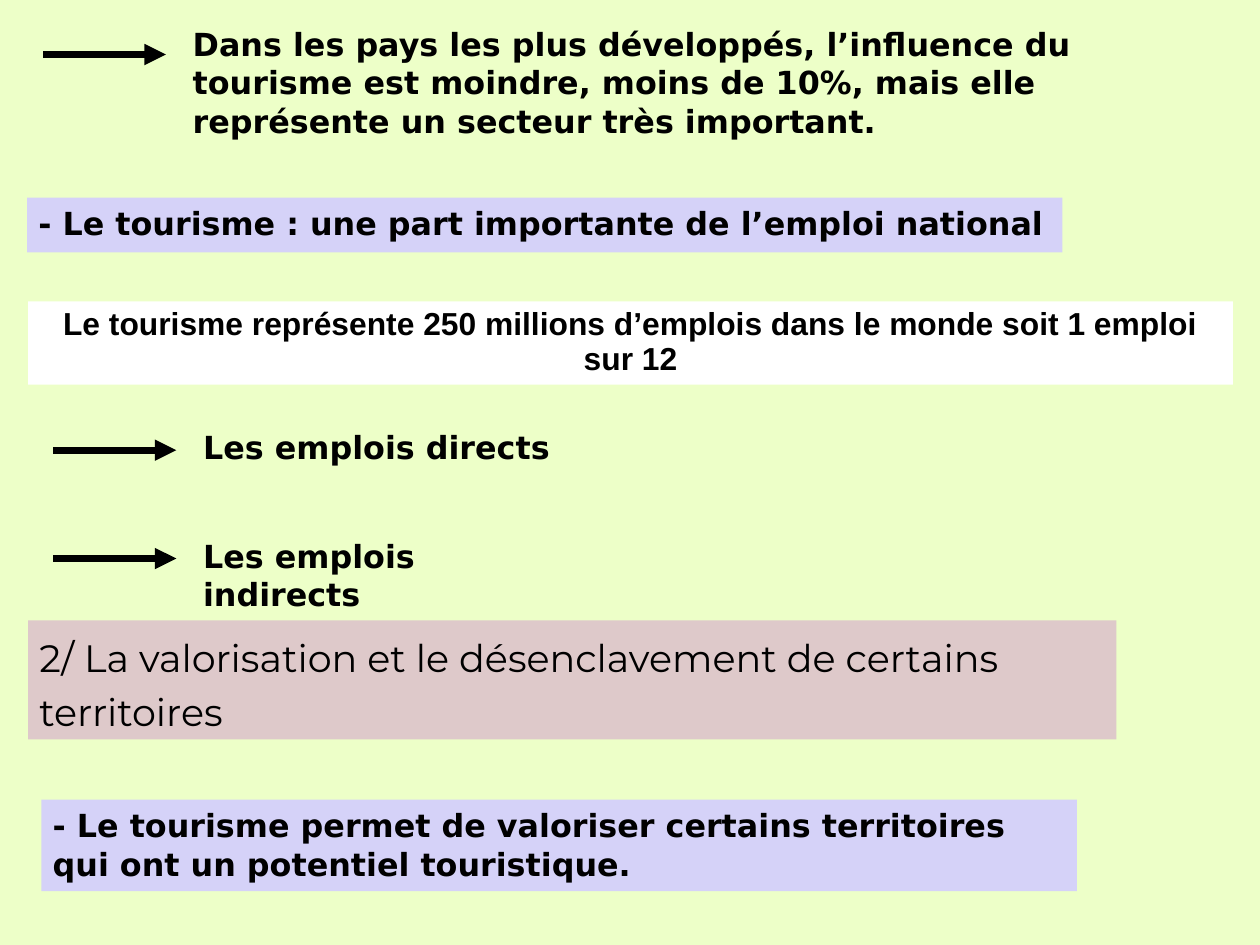
from lxml.etree import SubElement
from pptx import Presentation
from pptx.dml.color import RGBColor
from pptx.enum.shapes import MSO_CONNECTOR, MSO_SHAPE
from pptx.enum.text import MSO_ANCHOR, PP_ALIGN
from pptx.oxml.ns import qn
from pptx.util import Cm, Pt

WIDTH, HEIGHT = Cm(28), Cm(21)
BLACK, LILAC, ROSE, WHITE, LIME = "000000", "D5D2F8", "DEC9CA", "FFFFFF", "EDFFC8"
ARROW_GAP, ARROW_LENGTH = 10.98, 9.75


def color(value):
    return RGBColor.from_string(value)


def x(percent):
    return round(WIDTH * percent / 100)


def y(percent):
    return round(HEIGHT * percent / 100)


def write(sp, text, font="DejaVu Sans", size=20, bold=True, spacing=1.02,
          align=PP_ALIGN.LEFT):
    tf = sp.text_frame
    tf.word_wrap = True
    tf.vertical_anchor = MSO_ANCHOR.TOP
    tf.text = text
    p = tf.paragraphs[0]
    p.alignment = align
    p.line_spacing = spacing
    r = p.runs[0]
    r.font.name = font
    r.font.size = Pt(size)
    r.font.bold = bold
    r.font.color.rgb = color(BLACK)


def add_band(s, left, top, width, height, fill, text, **style):
    sp = s.shapes.add_shape(MSO_SHAPE.RECTANGLE, x(left), y(top), x(width), y(height))
    sp.shadow.inherit = False
    sp.fill.solid()
    sp.fill.fore_color.rgb = color(fill)
    sp.line.fill.background()
    write(sp, text, **style)


def add_arrow(s, left, top):
    arrow = s.shapes.add_connector(MSO_CONNECTOR.STRAIGHT, x(left), y(top),
                                   x(left + ARROW_LENGTH), y(top))
    arrow.line.width = Pt(4.5)
    arrow.line.color.rgb = color(BLACK)
    props = arrow._element.spPr
    SubElement(props.find(qn("a:ln")), qn("a:tailEnd"), type="triangle")
    SubElement(props, qn("a:effectLst"))


def add_point(s, left, top, width, height, arrow_drop, text):
    add_arrow(s, left - ARROW_GAP, top + arrow_drop)
    sp = s.shapes.add_textbox(x(left), y(top), x(width), y(height))
    write(sp, text)


def main():
    prs = Presentation()
    prs.slide_width, prs.slide_height = WIDTH, HEIGHT
    s = prs.slides.add_slide(prs.slide_layouts[6])
    s.background.fill.solid()
    s.background.fill.fore_color.rgb = color(LIME)

    add_point(s, 14.4, 1.9, 78.4, 15.24, 3.87,
              "Dans les pays les plus développés, l’influence du tourisme est moindre, "
              "moins de 10%, mais elle représente un secteur très important.")
    add_band(s, 2.15, 20.92, 82.18, 5.8, LILAC,
             "- Le tourisme : une part importante de l’emploi national")
    add_point(s, 15.22, 44.62, 29.76, 7.62, 3.02, "Les emplois directs")
    add_point(s, 15.22, 56.08, 31.94, 6.65, 3.02, "Les emplois indirects")
    add_band(s, 2.24, 65.66, 86.36, 12.58, ROSE,
             "2/ La valorisation et le désenclavement de certains territoires",
             font="Montserrat", size=24, bold=False, spacing=1.18)
    add_band(s, 3.29, 84.62, 82.18, 9.67, LILAC,
             "- Le tourisme permet de valoriser certains territoires "
             "qui ont un potentiel touristique.")
    add_band(s, 2.24, 31.9, 95.61, 8.8, WHITE,
             "Le tourisme représente 250 millions d’emplois dans le monde "
             "soit 1 emploi sur 12",
             font="Arial", spacing=0.93, align=PP_ALIGN.CENTER)

    prs.save("out.pptx")


if __name__ == "__main__":
    main()
